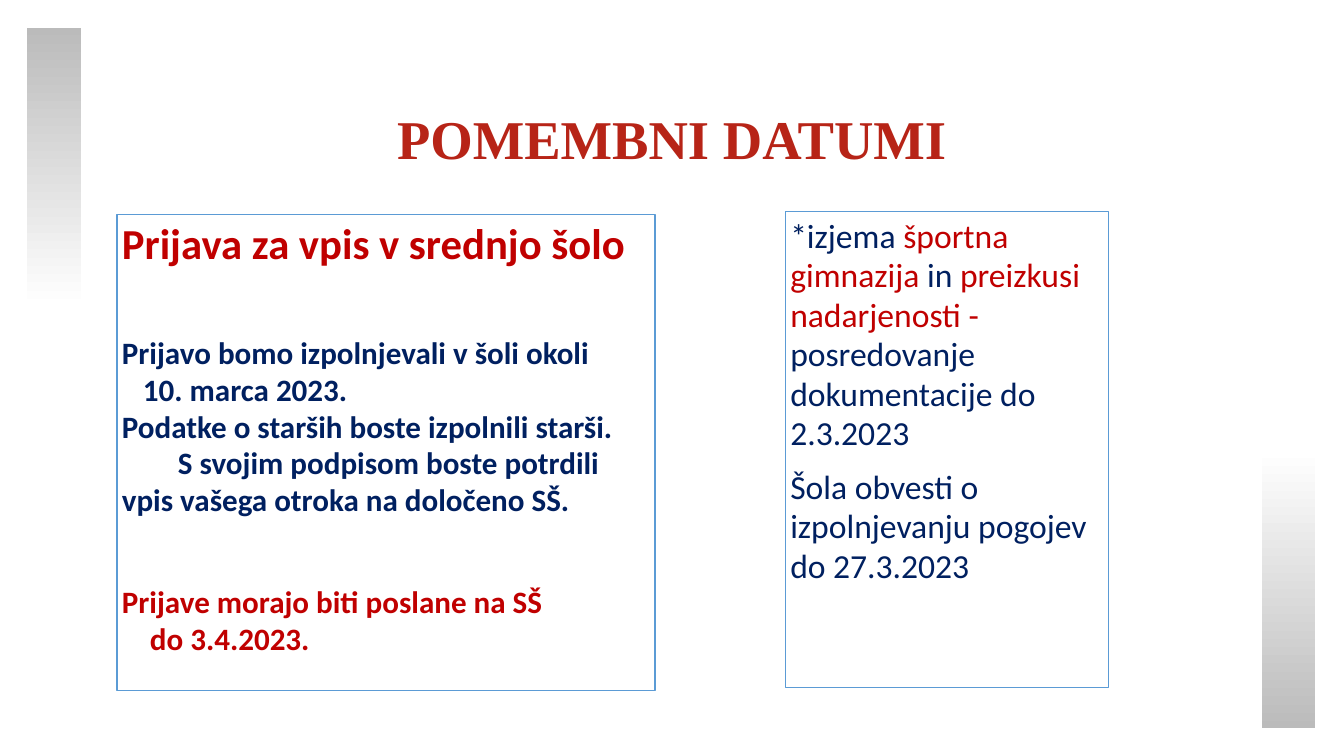
from pptx import Presentation
from pptx.dml.color import RGBColor
from pptx.enum.shapes import MSO_SHAPE
from pptx.enum.text import MSO_ANCHOR, PP_ALIGN
from pptx.util import Pt

WHITE = RGBColor(0xFF, 0xFF, 0xFF)
GREY = RGBColor(0xBB, 0xBB, 0xBB)
TITLE_RED = RGBColor(0xB7, 0x24, 0x17)
RED = RGBColor(0xC0, 0x00, 0x00)
NAVY = RGBColor(0x00, 0x20, 0x60)
BORDER_BLUE = RGBColor(0x5B, 0x9B, 0xD5)

INSET = 3.6
GAP = 10
SECTION_GAP = 47

# text, size, colour, space before, first-line indent
APPLICATION_LINES = [
    ("Prijava za vpis v srednjo šolo", 30.5, RED, 0, 0),
    ("Prijavo bomo izpolnjevali v šoli okoli", 22.2, NAVY, SECTION_GAP, 0),
    ("10. marca 2023.", 22.2, NAVY, 0, 15),
    ("Podatke o starših boste izpolnili starši.", 22.2, NAVY, 0, 0),
    ("S svojim podpisom boste potrdili vpis vašega otroka na določeno SŠ.",
     22.2, NAVY, 0, 40),
    ("Prijave morajo biti poslane na SŠ", 22.2, RED, SECTION_GAP, 0),
    ("do 3.4.2023.", 22.2, RED, 0, 20),
]
EXCEPTION_PARAGRAPHS = [
    [("*izjema ", NAVY), ("športna gimnazija ", RED), ("in ", NAVY),
     ("preizkusi nadarjenosti - ", RED),
     ("posredovanje dokumentacije do 2.3.2023", NAVY)],
    [("Šola obvesti o izpolnjevanju pogojev do 27.3.2023", NAVY)],
]


def set_margins(frame):
    frame.word_wrap = True
    frame.margin_left = frame.margin_right = Pt(INSET)
    frame.margin_top = frame.margin_bottom = Pt(INSET)


def add_run(paragraph, text, font_name, size, color, bold=False):
    run = paragraph.add_run()
    run.text = text
    run.font.name = font_name
    run.font.size = Pt(size)
    run.font.color.rgb = color
    run.font.bold = bold


def add_rectangle(slide, box, line_color, line_width):
    rectangle = slide.shapes.add_shape(MSO_SHAPE.RECTANGLE, *map(Pt, box))
    rectangle.shadow.inherit = False
    rectangle.line.color.rgb = line_color
    rectangle.line.width = Pt(line_width)
    return rectangle


def add_title(slide, box):
    title = slide.shapes.add_textbox(*map(Pt, box)).text_frame
    set_margins(title)
    title.vertical_anchor = MSO_ANCHOR.MIDDLE
    heading = title.paragraphs[0]
    heading.alignment = PP_ALIGN.CENTER
    heading.line_spacing = 0.9
    add_run(heading, "POMEMBNI DATUMI", "Times New Roman", 39, TITLE_RED, True)


def add_fading_bar(slide, box, top_color, bottom_color):
    bar = add_rectangle(slide, box, WHITE, 1.5)
    bar.fill.gradient()
    bar.fill.gradient_angle = 270
    for stop, color in zip(bar.fill.gradient_stops, (top_color, bottom_color)):
        stop.color.rgb = color
    first, last = bar.fill.gradient_stops
    first.position, last.position = 0, 1


def add_panel(slide, box):
    """Add an outlined, unfilled text panel and return its text frame."""
    panel = add_rectangle(slide, box, BORDER_BLUE, 1)
    panel.fill.background()
    frame = panel.text_frame
    set_margins(frame)
    frame.vertical_anchor = MSO_ANCHOR.TOP
    return frame


def next_paragraph(frame, index, space_before):
    paragraph = frame.add_paragraph() if index else frame.paragraphs[0]
    paragraph.alignment = PP_ALIGN.LEFT
    paragraph.line_spacing = 0.98
    paragraph.space_before = Pt(space_before)
    return paragraph


def add_application_panel(slide, box):
    frame = add_panel(slide, box)
    for index, (text, size, color, gap, indent) in enumerate(APPLICATION_LINES):
        paragraph = next_paragraph(frame, index, gap)
        paragraph._p.get_or_add_pPr().set("indent", str(Pt(indent)))
        add_run(paragraph, text, "Calibri", size, color, True)


def add_exception_panel(slide, box):
    frame = add_panel(slide, box)
    for index, pieces in enumerate(EXCEPTION_PARAGRAPHS):
        paragraph = next_paragraph(frame, index, GAP)
        for text, color in pieces:
            add_run(paragraph, text, "Calibri", 24, color)


def main():
    presentation = Presentation()
    presentation.slide_width, presentation.slide_height = Pt(960), Pt(540)
    slide = presentation.slides.add_slide(presentation.slide_layouts[6])
    add_title(slide, (183.6, 49, 592.6, 104.4))
    add_application_panel(slide, (83.5, 153.4, 384.5, 339.8))
    add_fading_bar(slide, (900.7, 321, 39.6, 200), WHITE, GREY)
    add_fading_bar(slide, (18.7, 19.4, 39.6, 200), GREY, WHITE)
    add_exception_panel(slide, (560.9, 151.2, 231, 339.8))
    presentation.save("out.pptx")


if __name__ == "__main__":
    main()
